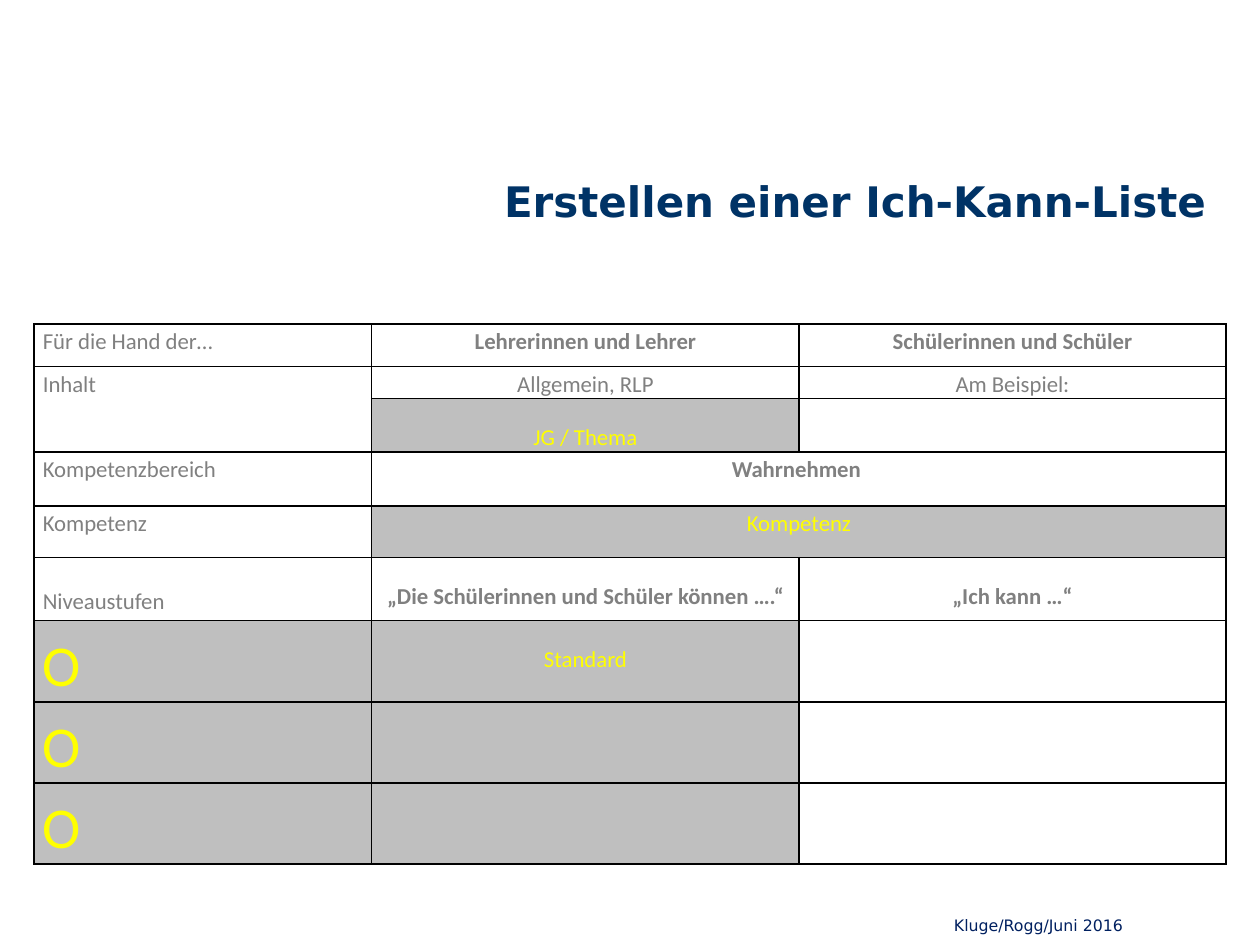
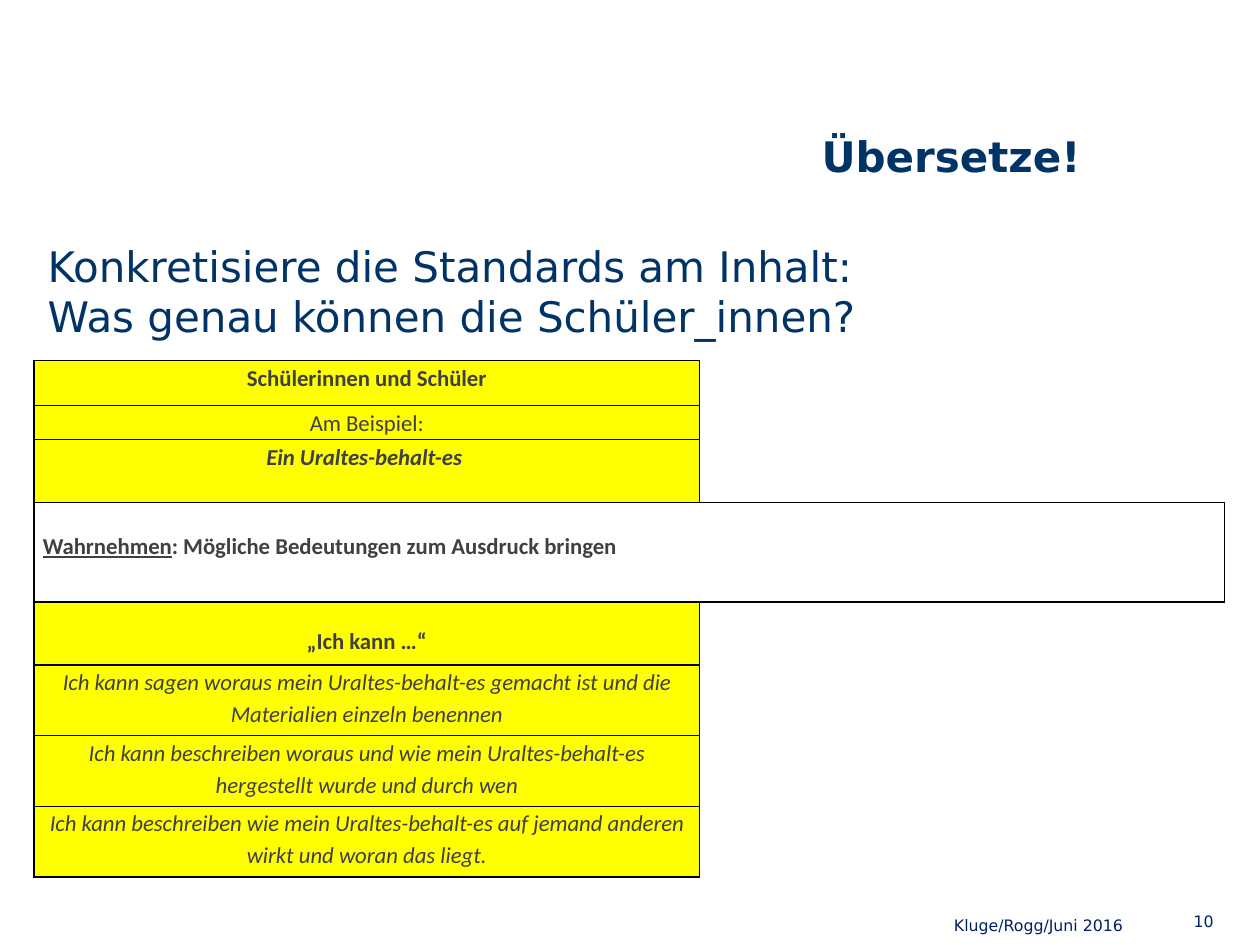
import dataclasses

import lxml.etree
import pptx
import pptx.dml.color
import pptx.enum.text
import pptx.oxml.ns
import pptx.util

Inches = pptx.util.Inches
ALIGN = pptx.enum.text.PP_ALIGN
ANCHOR = pptx.enum.text.MSO_ANCHOR


@dataclasses.dataclass(frozen=True)
class Theme:
    heading_font: str = "DejaVu Sans"
    table_font: str = "Calibri"
    navy: str = "003366"
    footer_blue: str = "002060"
    white: str = "FFFFFF"
    grey_fill: str = "BFBFBF"
    yellow: str = "FFFF00"
    grey_text: str = "808080"
    dark_text: str = "404040"
    rule: str = "000000"
    heading_size: int = 24
    footer_size: int = 9
    table_size: int = 13
    level_size: int = 33
    rule_width: int = 1
    line_spacing: float = 1.15
    cell_inset: float = 0.07
    small_drop: float = 0.17
    large_drop: float = 0.21


THEME = Theme()


@dataclasses.dataclass(frozen=True)
class Entry:
    runs: tuple = ()
    fill: str = THEME.white
    color: str = THEME.grey_text
    align: int = ALIGN.CENTER
    drop: float = 0
    size: int = THEME.table_size
    span: tuple = (1, 1)
    framed: bool = True


def label(text, **options):
    return Entry(((text, ""),), align=ALIGN.LEFT, **options)


def centred(text, marks="", **options):
    return Entry(((text, marks),), **options)


def gap(text="", **options):
    runs = ((text, ""),) if text else ()
    return Entry(runs, fill=THEME.grey_fill, color=THEME.yellow, **options)


def sample(text, marks, **options):
    return centred(text, marks, fill=THEME.yellow, color=THEME.dark_text, **options)


LEVEL = gap("O", align=ALIGN.LEFT, size=THEME.level_size)
BLANK = Entry()
OPEN = Entry(framed=False)
COVERED = None

FOOTER = "Kluge/Rogg/Juni 2016"
TABLE_LEFT = 0.27
FOOTER_TOP, FOOTER_HEIGHT = 7.19, 0.31
TITLE_TOP = 0.84

CHECKLIST = {
    "title": "Erstellen einer Ich-Kann-Liste",
    "title_box": (3.9, TITLE_TOP, 5.98, 1.5),
    "table_top": 2.57,
    "columns": [2.68, 3.39, 3.39],
    "rows": [0.34, 0.25, 0.42, 0.43, 0.41, 0.5] + [0.64] * 3,
    "entries": [
        [label("Für die Hand der…"), centred("Lehrerinnen und Lehrer", "b"),
         centred("Schülerinnen und Schüler", "b")],
        [label("Inhalt", span=(2, 1)), centred("Allgemein, RLP"), centred("Am Beispiel:")],
        [COVERED, gap("JG / Thema", drop=THEME.small_drop), BLANK],
        [label("Kompetenzbereich"), centred("Wahrnehmen ", "b", span=(1, 2)), COVERED],
        [label("Kompetenz"), gap("Kompetenz", span=(1, 2)), COVERED],
        [label("Niveaustufen", drop=THEME.large_drop),
         centred("„Die Schülerinnen und Schüler können ….“", "b", drop=THEME.small_drop),
         centred("„Ich kann …“", "b", drop=THEME.small_drop)],
        [LEVEL, gap("Standard", drop=THEME.small_drop), BLANK],
        [LEVEL, gap(), BLANK],
        [LEVEL, gap(), BLANK],
    ],
}

COMPETENCE = Entry(
    (("Wahrnehmen", "bu"), (": Mögliche Bedeutungen zum Ausdruck bringen", "b")),
    color=THEME.dark_text, align=ALIGN.LEFT, drop=THEME.large_drop, span=(1, 2))

TRANSLATION = {
    "title": "Übersetze!",
    "title_box": (6.42, TITLE_TOP, 3.58, 0.79),
    "task": ["Konkretisiere die Standards am Inhalt:", "Was genau können die Schüler_innen?"],
    "task_box": (0.28, 1.86, 9.21, 0.91),
    "number": "10",
    "table_top": 2.86,
    "columns": [5.28, 4.17],
    "rows": [0.36, 0.27, 0.5, 0.79, 0.5] + [0.56] * 3,
    "entries": [
        [sample("Schülerinnen und Schüler", "b"), OPEN],
        [sample("Am Beispiel:", ""), OPEN],
        [sample("Ein Uraltes-behalt-es ", "bi"), OPEN],
        [COMPETENCE, COVERED],
        [sample("„Ich kann …“", "b", drop=THEME.small_drop), OPEN],
        [sample("Ich kann sagen woraus mein Uraltes-behalt-es gemacht ist "
                "und die Materialien einzeln benennen", "i"), OPEN],
        [sample("Ich kann beschreiben woraus und wie mein Uraltes-behalt-es "
                "hergestellt wurde und durch wen", "i"), OPEN],
        [sample("Ich kann beschreiben wie mein Uraltes-behalt-es auf jemand anderen "
                "wirkt und woran das liegt.", "i"), OPEN],
    ],
}


def rgb(value):
    return pptx.dml.color.RGBColor.from_string(value)


def add_run(paragraph, text, font, size, color, marks=""):
    run = paragraph.add_run()
    run.text = text
    run.font.name = font
    run.font.size = pptx.util.Pt(size)
    run.font.color.rgb = rgb(color)
    run.font.bold = "b" in marks
    run.font.italic = "i" in marks
    run.font.underline = "u" in marks


def add_text(slide, box, lines, size, color, align=ALIGN.LEFT, anchor=ANCHOR.TOP):
    frame = slide.shapes.add_textbox(*map(Inches, box)).text_frame
    frame.word_wrap = True
    frame.vertical_anchor = anchor
    for index, line in enumerate(lines):
        paragraph = frame.add_paragraph() if index else frame.paragraphs[0]
        paragraph.alignment = align
        add_run(paragraph, line, THEME.heading_font, size, color)


def add_title(slide, text, box):
    title = slide.shapes.title
    title.left, title.top, title.width, title.height = map(Inches, box)
    title.fill.solid()
    title.fill.fore_color.rgb = rgb(THEME.white)
    frame = title.text_frame
    frame.word_wrap = True
    frame.auto_size = pptx.enum.text.MSO_AUTO_SIZE.NONE
    frame.vertical_anchor = ANCHOR.MIDDLE
    frame.paragraphs[0].alignment = ALIGN.LEFT
    add_run(frame.paragraphs[0], text, THEME.heading_font, THEME.heading_size, THEME.navy, "b")


def fill_cell(cell, entry):
    cell.margin_left = cell.margin_right = Inches(THEME.cell_inset)
    cell.margin_top, cell.margin_bottom = Inches(entry.drop), 0
    if entry.framed:
        cell.fill.solid()
        cell.fill.fore_color.rgb = rgb(entry.fill)
    else:
        cell.fill.background()
    paragraph = cell.text_frame.paragraphs[0]
    paragraph.alignment = entry.align
    paragraph.line_spacing = THEME.line_spacing
    for text, marks in entry.runs:
        add_run(paragraph, text, THEME.table_font, entry.size, entry.color, marks)
    if not entry.runs:
        paragraph._p.get_or_add_endParaRPr().set("sz", str(entry.size * 100))


def is_framed(entries, row, column):
    if not (0 <= row < len(entries) and 0 <= column < len(entries[0])):
        return False
    entry = entries[row][column]
    return entry is COVERED or entry.framed


def draw_borders(cell, entries, row, column):
    qn = pptx.oxml.ns.qn
    properties = cell._tc.get_or_add_tcPr()
    neighbours = {"lnL": (0, -1), "lnR": (0, 1), "lnT": (-1, 0), "lnB": (1, 0)}
    for index, (side, (down, right)) in enumerate(neighbours.items()):
        line = lxml.etree.Element(qn(f"a:{side}"), w=str(pptx.util.Pt(THEME.rule_width)))
        if is_framed(entries, row, column) or is_framed(entries, row + down, column + right):
            solid = lxml.etree.SubElement(line, qn("a:solidFill"))
            lxml.etree.SubElement(solid, qn("a:srgbClr"), val=THEME.rule)
        else:
            lxml.etree.SubElement(line, qn("a:noFill"))
        properties.insert(index, line)


def add_grid(slide, top, columns, rows, entries):
    box = (TABLE_LEFT, top, sum(columns), sum(rows))
    table = slide.shapes.add_table(len(rows), len(columns), *map(Inches, box)).table
    table.first_row = table.horz_banding = False
    for column, width in zip(table.columns, columns):
        column.width = Inches(width)
    for row, height in zip(table.rows, rows):
        row.height = Inches(height)
    for r, line in enumerate(entries):
        for c, entry in enumerate(line):
            cell = table.cell(r, c)
            fill_cell(cell, entry or BLANK)
            draw_borders(cell, entries, r, c)
            if entry and entry.span != (1, 1):
                cell.merge(table.cell(r + entry.span[0] - 1, c + entry.span[1] - 1))


def build_slide(deck, content):
    slide = deck.slides.add_slide(deck.slide_layouts[5])
    add_title(slide, content["title"], content["title_box"])
    add_grid(slide, content["table_top"], content["columns"], content["rows"], content["entries"])
    add_text(slide, (2.98, FOOTER_TOP, 6.03, FOOTER_HEIGHT), [FOOTER],
             THEME.footer_size, THEME.footer_blue, ALIGN.RIGHT, ANCHOR.MIDDLE)
    if "number" in content:
        add_text(slide, (9.07, FOOTER_TOP, 0.66, FOOTER_HEIGHT), [content["number"]],
                 THEME.footer_size, THEME.footer_blue, ALIGN.RIGHT)
    if "task" in content:
        add_text(slide, content["task_box"], content["task"], THEME.heading_size, THEME.navy)


def main():
    deck = pptx.Presentation()
    deck.slide_width, deck.slide_height = Inches(10), Inches(7.5)
    for content in (CHECKLIST, TRANSLATION):
        build_slide(deck, content)
    deck.save("out.pptx")


if __name__ == "__main__":
    main()
